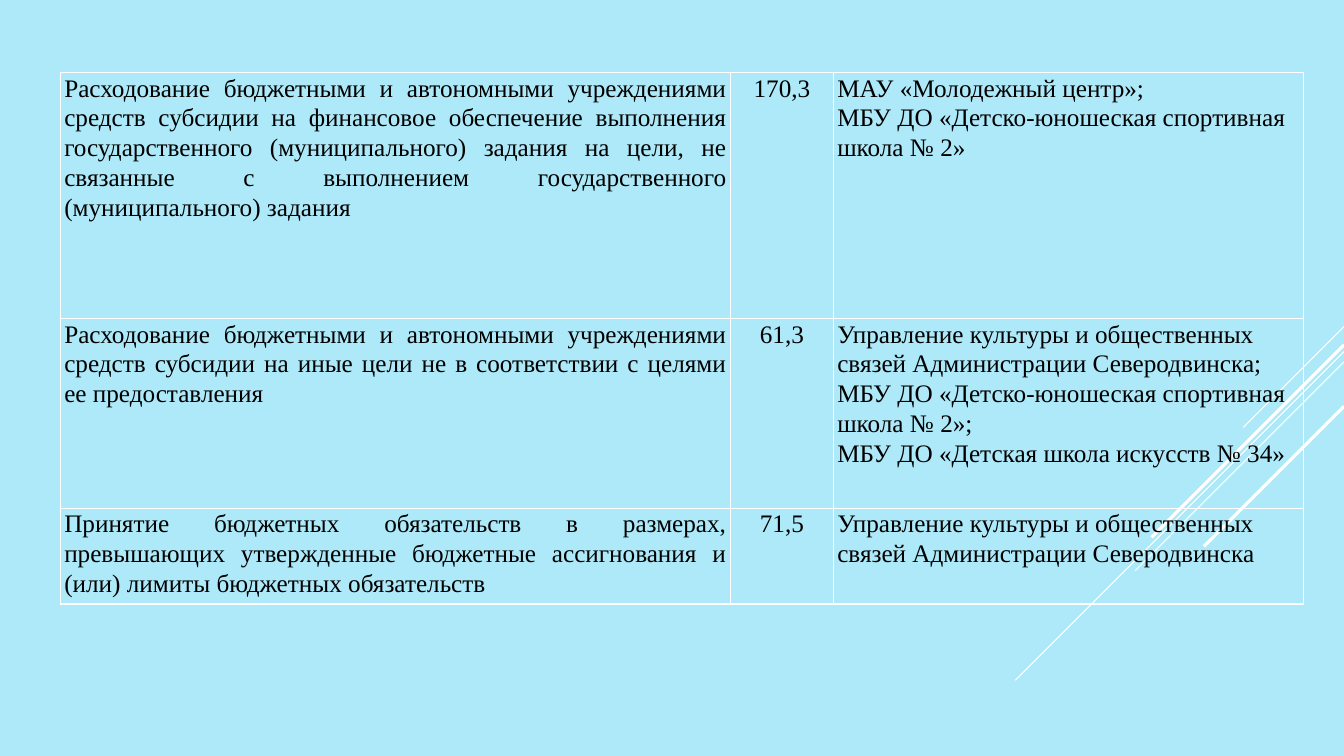
from dataclasses import dataclass

from lxml.etree import SubElement
from pptx import Presentation
from pptx.dml.color import RGBColor
from pptx.enum.shapes import MSO_CONNECTOR
from pptx.enum.text import PP_ALIGN
from pptx.oxml.ns import qn
from pptx.slide import Slide
from pptx.table import _Cell
from pptx.util import Cm, Pt

SKY = RGBColor(0xAD, 0xE9, 0xF8)
WHITE = RGBColor(0xFF, 0xFF, 0xFF)
BLACK = RGBColor(0x00, 0x00, 0x00)
PAGE_WIDTH, PAGE_HEIGHT = 33.87, 19.05
COLUMN_WIDTHS = (16.89, 2.59, 11.84)
COLUMN_ALIGNMENTS = (PP_ALIGN.JUSTIFY, PP_ALIGN.CENTER, PP_ALIGN.LEFT)


@dataclass
class Ray:
    """A diagonal at 45 degrees, falling from the right edge of the page."""
    top: float
    run: float
    weight: float


@dataclass
class Violation:
    height: float
    description: str
    amount: str
    institutions: str


RAYS = (
    Ray(8.23, 2.54, 0.75),
    Ray(8.86, 8.28, 0.75),
    Ray(9.12, 5.26, 0.75),
    Ray(8.69, 4.85, 2.25),
    Ray(10.24, 3.53, 2.25),
)

VIOLATIONS = (
    Violation(
        6.2,
        "Расходование бюджетными и автономными учреждениями средств субсидии "
        "на финансовое обеспечение выполнения государственного (муниципального) "
        "задания на цели, не связанные с выполнением государственного "
        "(муниципального) задания",
        "170,3",
        "МАУ «Молодежный центр»;\n"
        "МБУ ДО «Детско-юношеская спортивная школа № 2»",
    ),
    Violation(
        4.78,
        "Расходование бюджетными и автономными учреждениями средств субсидии "
        "на иные цели не в соответствии с целями ее предоставления",
        "61,3",
        "Управление культуры и общественных связей Администрации Северодвинска;\n"
        "МБУ ДО «Детско-юношеская спортивная школа № 2»;\n"
        "МБУ ДО «Детская школа искусств № 34»",
    ),
    Violation(
        2.41,
        "Принятие бюджетных обязательств в размерах, превышающих утвержденные "
        "бюджетные ассигнования и (или) лимиты бюджетных обязательств",
        "71,5",
        "Управление культуры и общественных связей Администрации Северодвинска",
    ),
)


def draw_ray(page: Slide, ray: Ray) -> None:
    line = page.shapes.add_connector(
        MSO_CONNECTOR.STRAIGHT,
        Cm(PAGE_WIDTH), Cm(ray.top),
        Cm(PAGE_WIDTH - ray.run), Cm(ray.top + ray.run),
    )
    line.line.color.rgb = WHITE
    line.line.width = Pt(ray.weight)
    SubElement(line.element.spPr, qn("a:effectLst"))


def write_text(cell: _Cell, text: str, *, alignment: PP_ALIGN,
               size: float = 18, font: str = "Times New Roman",
               color: RGBColor = BLACK, spacing: float = 1.07) -> None:
    cell.text = text
    for para in cell.text_frame.paragraphs:
        para.alignment = alignment
        para.line_spacing = spacing
        for span in para.runs:
            span.font.size = Pt(size)
            span.font.name = font
            span.font.color.rgb = color


def format_cell(cell: _Cell) -> None:
    cell.margin_left = cell.margin_right = Cm(0.1)
    cell.margin_top = cell.margin_bottom = 0
    properties = cell._tc.get_or_add_tcPr()
    for side in ("lnL", "lnR", "lnT", "lnB"):
        border = SubElement(properties, qn(f"a:{side}"), w=str(Pt(1)))
        fill = SubElement(border, qn("a:solidFill"))
        SubElement(fill, qn("a:srgbClr"), val=str(WHITE))
    cell.fill.background()


def draw_table(page: Slide) -> None:
    heights = [violation.height for violation in VIOLATIONS]
    table = page.shapes.add_table(
        len(VIOLATIONS), len(COLUMN_WIDTHS), Cm(1.52), Cm(1.83),
        Cm(sum(COLUMN_WIDTHS)), Cm(sum(heights)),
    ).table
    table.first_row = table.horz_banding = False
    for column, width in zip(table.columns, COLUMN_WIDTHS):
        column.width = Cm(width)
    for row, violation in zip(table.rows, VIOLATIONS):
        row.height = Cm(violation.height)
        texts = (violation.description, violation.amount, violation.institutions)
        for cell, text, alignment in zip(row.cells, texts, COLUMN_ALIGNMENTS):
            format_cell(cell)
            write_text(cell, text, alignment=alignment)


def main() -> None:
    deck = Presentation()
    deck.slide_width, deck.slide_height = Cm(PAGE_WIDTH), Cm(PAGE_HEIGHT)
    page = deck.slides.add_slide(deck.slide_layouts[6])

    # Background and diagonal rays
    page.background.fill.solid()
    page.background.fill.fore_color.rgb = SKY
    for ray in RAYS:
        draw_ray(page, ray)

    # Table of budget violations
    draw_table(page)
    deck.save("out.pptx")


if __name__ == "__main__":
    main()
